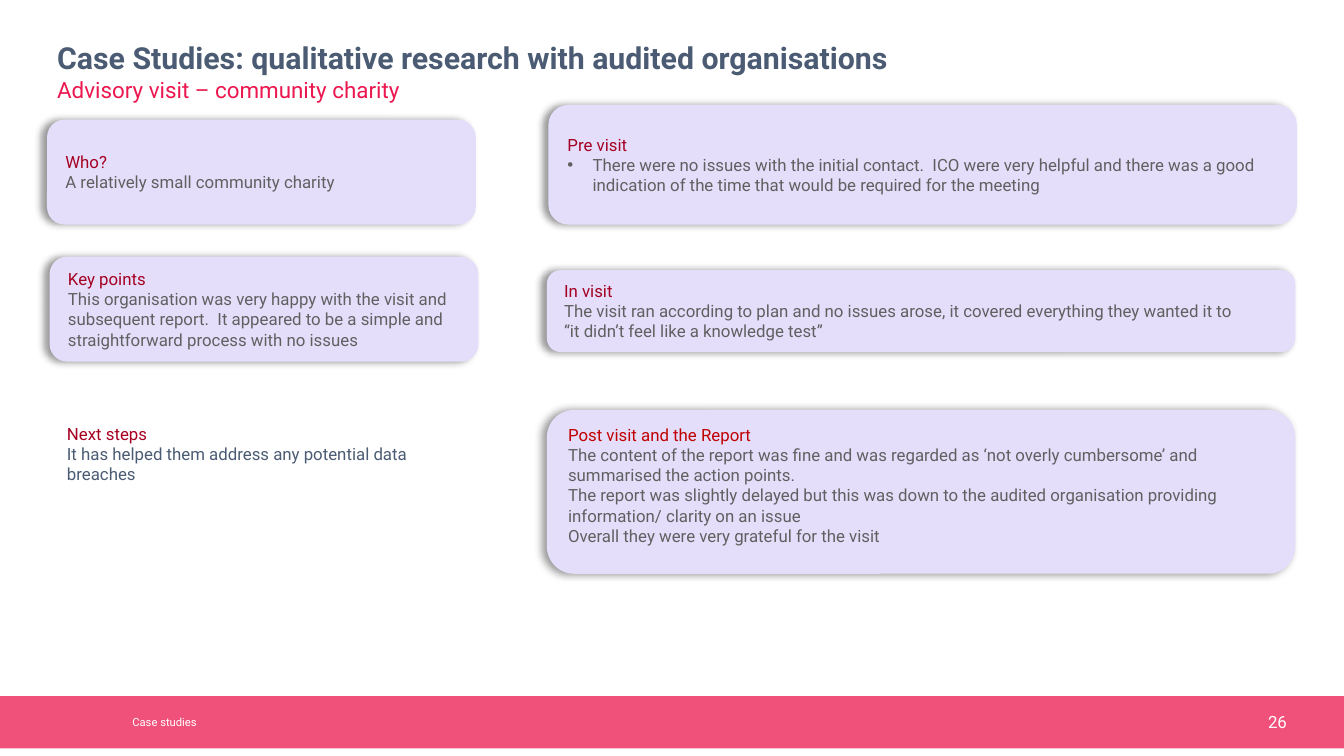
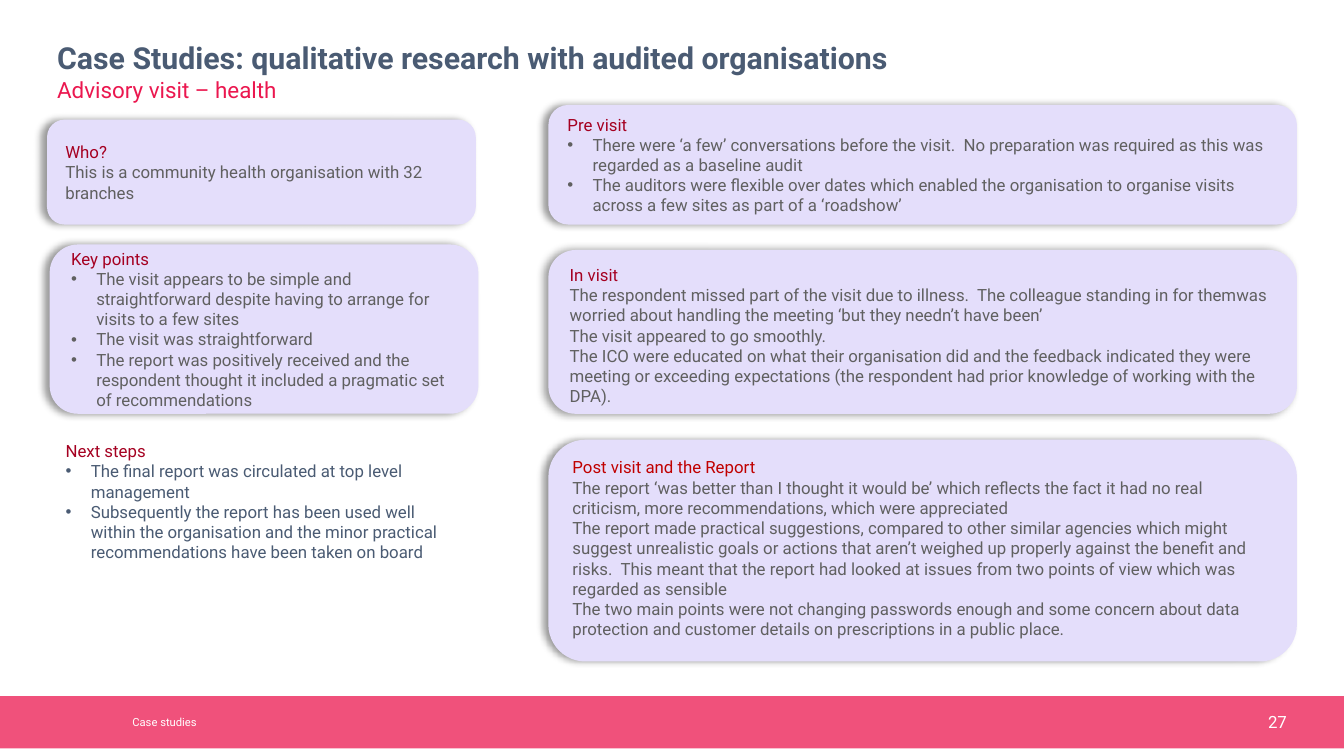
"""Builds two case study slides about advisory visits."""
import pptx
import pptx.dml.color
import pptx.enum.shapes
import pptx.enum.text
import pptx.oxml
import pptx.oxml.ns
import pptx.util

Pt = pptx.util.Pt
ANCHOR = pptx.enum.text.MSO_ANCHOR
ALIGN = pptx.enum.text.PP_ALIGN
SHAPE = pptx.enum.shapes.MSO_SHAPE
NAMESPACE = pptx.oxml.ns.nsdecls("a")

FONT = "Roboto"
PINK, SLATE, LILAC, GREY, WHITE = "EB174F", "4A5B73", "E4DEFB", "606060", "FFFFFF"
CRIMSON, RED = "A50021", "C00000"
TITLE = "Case Studies: qualitative research with audited organisations"
FOOTER = "Case studies"
INDENT = 13.5
LEFT_WIDTH, RIGHT_WIDTH = 229.7, 401
WHO = (25.2, 64.1, LEFT_WIDTH, 56.2)
PRE_VISIT = (293.8, 56.2, RIGHT_WIDTH, 64.1)


def colour(value):
    """Return the colour for a hex string."""
    return pptx.dml.color.RGBColor.from_string(value)


def style(para, size, value, bold=False):
    """Format the runs of a paragraph."""
    for span in para.runs:
        span.font.name = FONT
        span.font.size = Pt(size)
        span.font.bold = bold
        span.font.color.rgb = colour(value)


def add_bullet(para):
    """Give a paragraph a hanging bullet."""
    properties = para._p.get_or_add_pPr()
    properties.set("marL", str(Pt(INDENT)))
    properties.set("indent", str(-Pt(INDENT)))
    for markup in (f'<a:buFont {NAMESPACE} typeface="Arial"/>',
                   f'<a:buChar {NAMESPACE} char="•"/>'):
        properties.append(pptx.oxml.parse_xml(markup))


def add_shadow(shape):
    """Give a shape a soft shadow on its left."""
    shape.shadow.inherit = False
    effects = shape._element.spPr.find(pptx.oxml.ns.qn("a:effectLst"))
    effects.append(pptx.oxml.parse_xml(
        f'<a:outerShdw {NAMESPACE} blurRad="{Pt(4)}" dist="{Pt(3)}" dir="10800000" '
        'algn="r" rotWithShape="0"><a:srgbClr val="000000">'
        '<a:alpha val="40000"/></a:srgbClr></a:outerShdw>'))


def add_label(page, area, text, size, value, bold=False, align=ALIGN.LEFT, spacing=1.0):
    """Add one line of text, centred vertically in its area."""
    frame = page.shapes.add_textbox(*map(Pt, area)).text_frame
    frame.word_wrap = True
    frame.vertical_anchor = ANCHOR.MIDDLE
    frame.margin_left = frame.margin_right = Pt(5.4)
    frame.margin_top = frame.margin_bottom = Pt(2.7)
    frame.text = text
    para = frame.paragraphs[0]
    para.alignment = align
    para.line_spacing = spacing
    style(para, size, value, bold)


def add_band(page):
    """Add the translucent footer band."""
    band = page.shapes.add_shape(SHAPE.RECTANGLE, 0, Pt(373), Pt(720), Pt(28))
    band.shadow.inherit = False
    band.line.fill.background()
    band.fill.solid()
    band.fill.fore_color.rgb = colour(PINK)
    tint = band._element.spPr.find(".//" + pptx.oxml.ns.qn("a:srgbClr"))
    tint.append(pptx.oxml.parse_xml(f'<a:alpha {NAMESPACE} val="75000"/>'))


def fill_text(frame, heading, lines, bulleted, anchor, heading_colour, body_colour):
    """Write a coloured heading and its lines into a text frame."""
    frame.word_wrap = True
    frame.vertical_anchor = anchor
    frame.text = "\n".join([heading, *lines])
    for position, para in enumerate(frame.paragraphs):
        if position and bulleted:
            add_bullet(para)
        para.alignment = ALIGN.LEFT
        style(para, 9, body_colour if position else heading_colour)


def add_card(page, area, heading, lines, bulleted=False, anchor=ANCHOR.MIDDLE,
             heading_colour=CRIMSON):
    """Add a rounded lilac card with a shadow."""
    card = page.shapes.add_shape(SHAPE.ROUNDED_RECTANGLE, *map(Pt, area))
    card.fill.solid()
    card.fill.fore_color.rgb = colour(LILAC)
    card.line.fill.background()
    add_shadow(card)
    fill_text(card.text_frame, heading, lines, bulleted, anchor, heading_colour, GREY)


def add_next_steps(page, area, lines, bulleted=False):
    """Add the next steps as plain text."""
    box = page.shapes.add_textbox(*map(Pt, area))
    fill_text(box.text_frame, "Next steps", lines, bulleted, ANCHOR.TOP, CRIMSON, SLATE)


def add_case_page(deck, subtitle, number):
    """Add a page with the shared title, band and footer."""
    page = deck.slides.add_slide(deck.slide_layouts[6])
    add_band(page)
    add_label(page, (25.2, 20.9, 669, 22.3), TITLE, 16.2, SLATE, bold=True, spacing=0.9)
    add_label(page, (25.2, 38.2, 669, 21.6), subtitle, 12, PINK, spacing=0.9)
    add_label(page, (65.5, 378, 572.4, 17.3), FOOTER, 6, WHITE)
    add_label(page, (643.7, 378, 51.1, 17.3), str(number), 9, WHITE, align=ALIGN.RIGHT)
    return page


def add_charity_page(deck):
    """Add the community charity case."""
    page = add_case_page(deck, "Advisory visit – community charity", 26)
    add_next_steps(page, (28.8, 223.2, 225.4, 105), [
        "It has helped them address any potential data breaches"])
    add_card(page, WHO, "Who?", ["A relatively small community charity"])
    add_card(page, PRE_VISIT, "Pre visit", [
        "There were no issues with the initial contact.  ICO were very helpful and there was "
        "a good indication of the time that would be required for the meeting"],
        bulleted=True)
    add_card(page, (293, 219.6, RIGHT_WIDTH, 87.8), "Post visit and the Report", [
        "The content of the report was fine and was regarded as ‘not overly cumbersome’ and "
        "summarised the action points.",
        "The report was slightly delayed but this was down to the audited organisation "
        "providing information/ clarity on an issue",
        "Overall they were very grateful for the visit"],
        anchor=ANCHOR.TOP, heading_colour=RED)
    add_card(page, (293, 144.7, RIGHT_WIDTH, 43.9), "In visit", [
        "The visit ran according to plan and no issues arose, it covered everything they "
        "wanted it to",
        "“it didn’t feel like a knowledge test”"], anchor=ANCHOR.TOP)
    add_card(page, (26.6, 137.5, LEFT_WIDTH, 56.2), "Key points", [
        "This organisation was very happy with the visit and subsequent report.  It appeared "
        "to be a simple and straightforward process with no issues"])


def add_health_page(deck):
    """Add the health organisation case."""
    page = add_case_page(deck, "Advisory visit – health", 27)
    add_next_steps(page, (28.1, 232.6, 225.4, 72.7), [
        "The final report was circulated at top level management",
        "Subsequently the report has been used well within the organisation and the minor "
        "practical recommendations have been taken on board"], bulleted=True)
    add_card(page, WHO, "Who?", ["This is a community health organisation with 32 branches"])
    add_card(page, PRE_VISIT, "Pre visit", [
        "There were ‘a few’ conversations before the visit.  No preparation was required as "
        "this was regarded as a baseline audit",
        "The auditors were flexible over dates which enabled the organisation to organise "
        "visits across a few sites as part of a ‘roadshow’"], bulleted=True)
    add_card(page, (293.8, 235.6, RIGHT_WIDTH, 118.8), "Post visit and the Report", [
        "The report ‘was better than I thought it would be’ which reflects the fact it had "
        "no real criticism, more recommendations, which were appreciated",
        "The report made practical suggestions, compared to other similar agencies which "
        "might suggest unrealistic goals or actions that aren’t weighed up properly against "
        "the benefit and risks.  This meant that the report had looked at issues from two "
        "points of view which was regarded as sensible",
        "The two main points were not changing passwords enough and some concern about data "
        "protection and customer details on prescriptions in a public place."],
        anchor=ANCHOR.TOP, heading_colour=RED)
    add_card(page, (293.8, 133.9, RIGHT_WIDTH, 87.8), "In visit", [
        "The respondent missed part of the visit due to illness.  The colleague standing in "
        "for themwas worried about handling the meeting ‘but they needn’t have been’",
        "The visit appeared to go smoothly.",
        "The ICO were educated on what their organisation did and the feedback indicated "
        "they were meeting or exceeding expectations (the respondent had prior knowledge of "
        "working with the DPA)."], anchor=ANCHOR.TOP)
    add_card(page, (26.6, 131, LEFT_WIDTH, 90.7), "Key points", [
        "The visit appears to be simple and straightforward despite having to arrange for "
        "visits to a few sites",
        "The visit was straightforward",
        "The report was positively received and the respondent thought it included a "
        "pragmatic set of recommendations"], bulleted=True)


def main():
    """Build and save the deck."""
    deck = pptx.Presentation()
    deck.slide_width, deck.slide_height = Pt(720), Pt(405)
    add_charity_page(deck)
    add_health_page(deck)
    deck.save("out.pptx")


if __name__ == "__main__":
    main()
